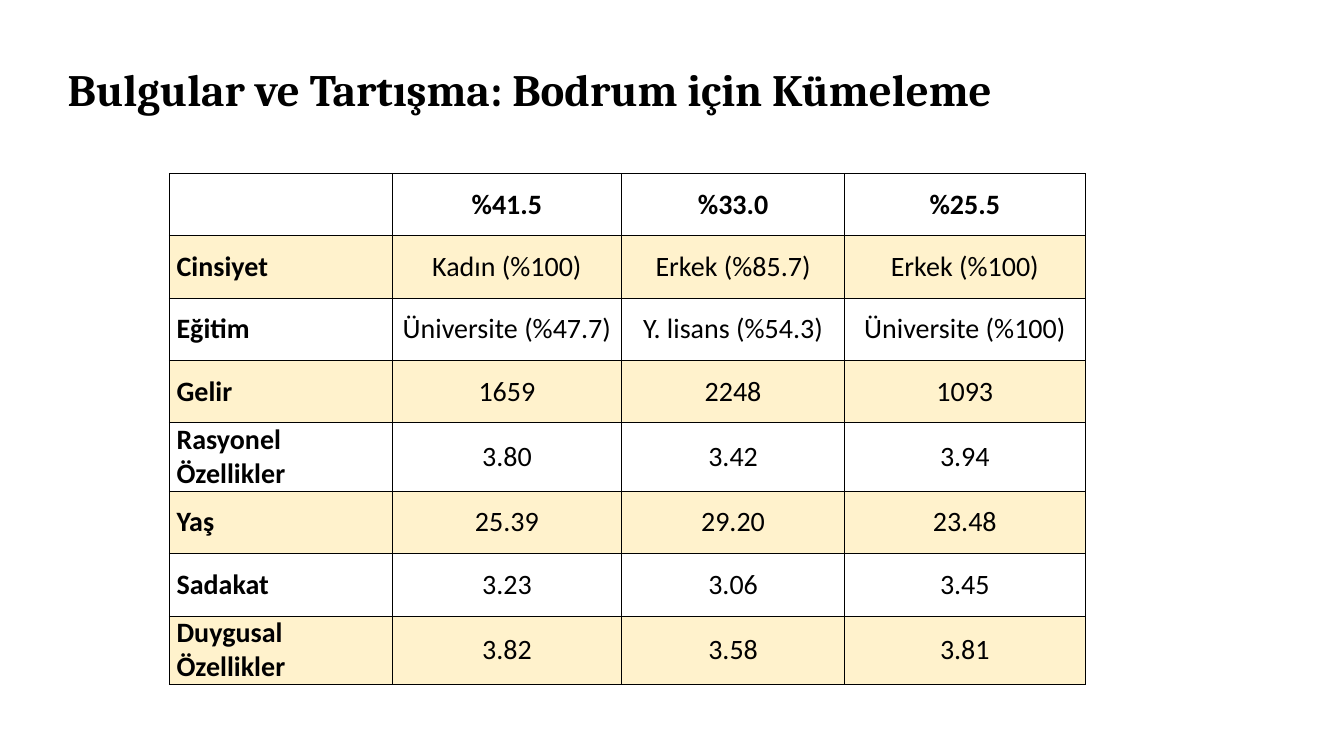
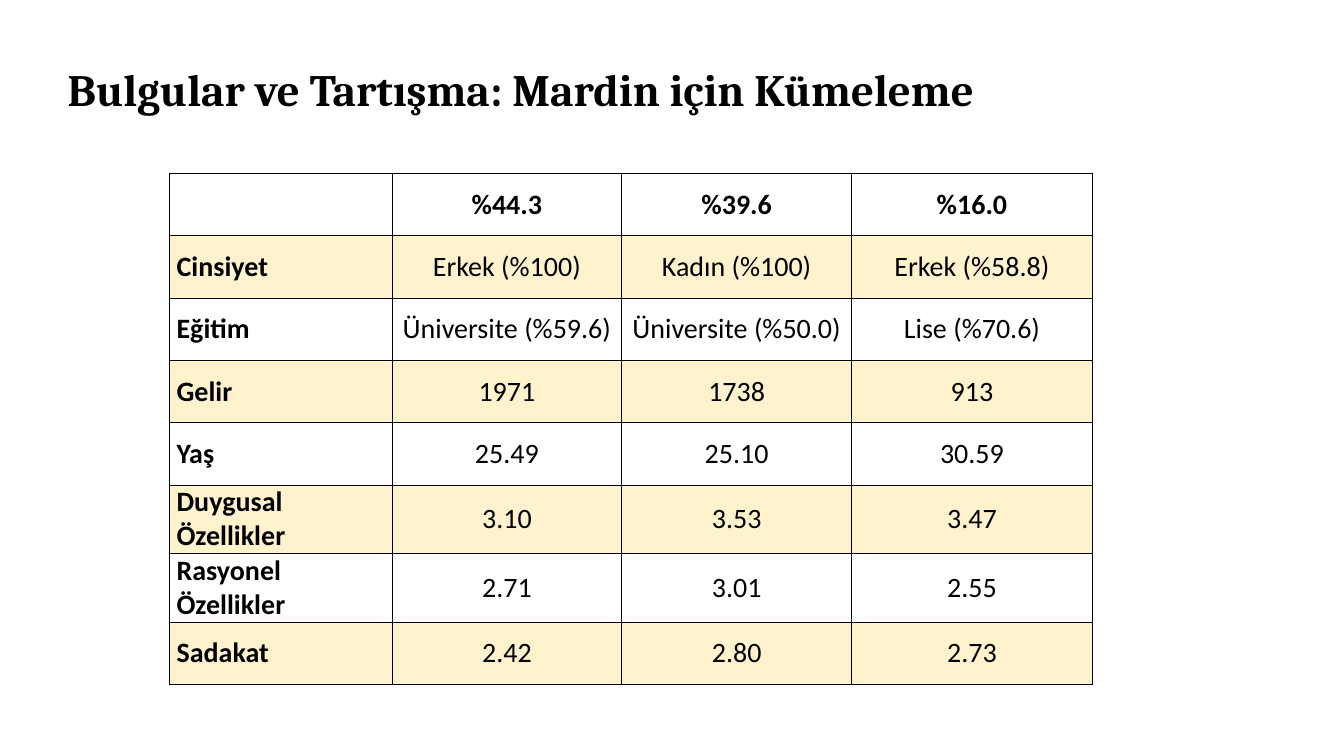
import pptx
import pptx.dml.color
import pptx.enum.text
import pptx.oxml
import pptx.oxml.ns
import pptx.util

Cm = pptx.util.Cm
Pt = pptx.util.Pt
ALIGN = pptx.enum.text.PP_ALIGN
MIDDLE = pptx.enum.text.MSO_ANCHOR.MIDDLE

INK = "000000"
PAPER = "FFFFFF"
BAND = "FFF2CC"
ROW_HEIGHT = 1.57
THIN, THICK = 0.5, 1

destinations = [
    ("Bodrum", [5.61, 5.79, 5.61, 6.07], [
        ["", "%41.5", "%33.0", "%25.5"],
        ["Cinsiyet", "Kadın (%100)", "Erkek (%85.7)", "Erkek (%100)"],
        ["Eğitim", "Üniversite (%47.7)", "Y. lisans (%54.3)", "Üniversite (%100)"],
        ["Gelir", "1659", "2248", "1093"],
        ["Rasyonel Özellikler", "3.80", "3.42", "3.94"],
        ["Yaş", "25.39", "29.20", "23.48"],
        ["Sadakat", "3.23", "3.06", "3.45"],
        ["Duygusal Özellikler", "3.82", "3.58", "3.81"],
    ]),
    ("Mardin", [5.61, 5.79, 5.79, 6.07], [
        ["", "%44.3", "%39.6", "%16.0"],
        ["Cinsiyet", "Erkek (%100)", "Kadın (%100)", "Erkek (%58.8)"],
        ["Eğitim", "Üniversite (%59.6)", "Üniversite (%50.0)", "Lise (%70.6)"],
        ["Gelir", "1971", "1738", "913"],
        ["Yaş", "25.49", "25.10", "30.59"],
        ["Duygusal Özellikler", "3.10", "3.53", "3.47"],
        ["Rasyonel Özellikler", "2.71", "3.01", "2.55"],
        ["Sadakat", "2.42", "2.80", "2.73"],
    ]),
]


def color(hex_code):
    return pptx.dml.color.RGBColor.from_string(hex_code)


def add_borders(cell, widths):
    properties = cell._tc.get_or_add_tcPr()
    for side, width in widths.items():
        properties.append(pptx.oxml.parse_xml(
            f'<a:ln{side} {pptx.oxml.ns.nsdecls("a")} w="{Pt(width)}">'
            f'<a:solidFill><a:srgbClr val="{INK}"/></a:solidFill></a:ln{side}>'))


presentation = pptx.Presentation()
presentation.slide_width = Cm(33.87)
presentation.slide_height = Cm(19.05)

layout = presentation.slide_layouts[5]
layout_title = layout.placeholders[0]
layout_title.left, layout_title.top = Cm(1.45), Cm(0.76)
layout_title.width, layout_title.height = Cm(30), Cm(2.97)

for destination, column_widths, rows in destinations:
    slide = presentation.slides.add_slide(layout)
    title = slide.shapes.title.text_frame
    title.text = f"Bulgular ve Tartışma: {destination} için Kümeleme"
    title.vertical_anchor = MIDDLE
    heading = title.paragraphs[0]
    heading.alignment = ALIGN.LEFT
    heading.font.name = "Cambria"
    heading.font.size = Pt(32)
    heading.font.bold = True
    heading.font.color.rgb = color(INK)

    clusters = slide.shapes.add_table(
        len(rows), len(column_widths), Cm(4.27), Cm(4.37),
        Cm(sum(column_widths)), Cm(ROW_HEIGHT * len(rows))).table
    clusters.first_row = False
    clusters.horz_banding = False
    for column, width in zip(clusters.columns, column_widths):
        column.width = Cm(width)

    for r, row in enumerate(rows):
        clusters.rows[r].height = Cm(ROW_HEIGHT)
        for c, value in enumerate(row):
            cell = clusters.cell(r, c)
            add_borders(cell, {
                "L": THICK if c == 0 else THIN,
                "R": THIN,
                "T": THICK if r == 1 else THIN,
                "B": THICK if r == 0 else THIN,
            })
            cell.fill.solid()
            cell.fill.fore_color.rgb = color(BAND if r % 2 else PAPER)
            cell.vertical_anchor = MIDDLE
            cell.margin_left = cell.margin_right = Cm(0.18)
            cell.margin_top = cell.margin_bottom = 0
            cell.text = value
            entry = cell.text_frame.paragraphs[0]
            entry.alignment = ALIGN.CENTER if c else ALIGN.JUSTIFY
            entry.font.name = "Calibri"
            entry.font.size = Pt(20)
            entry.font.bold = r == 0 or c == 0
            entry.font.color.rgb = color(INK)

presentation.save("out.pptx")
